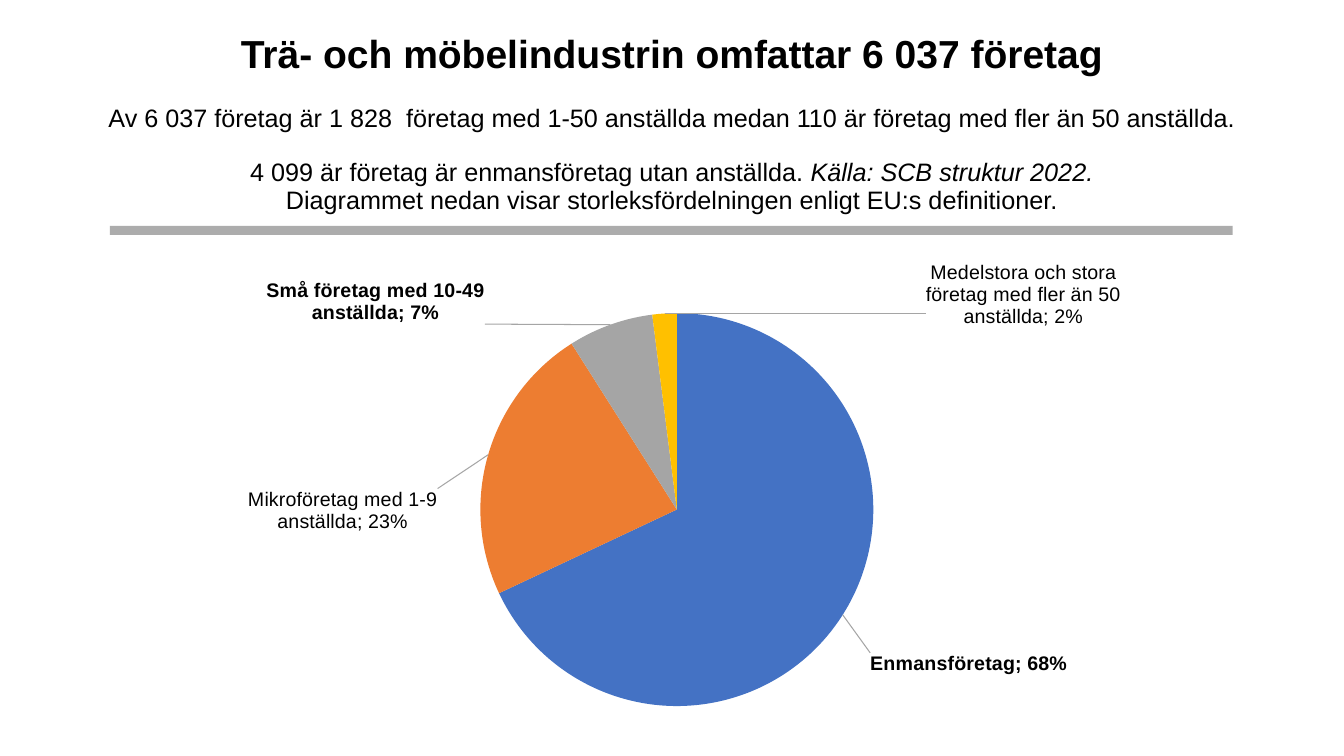
from lxml.etree import SubElement
from pptx import Presentation
from pptx.chart.data import CategoryChartData
from pptx.dml.color import RGBColor
from pptx.enum.chart import XL_CHART_TYPE as ChartType, XL_LABEL_POSITION as LabelPosition
from pptx.enum.shapes import MSO_SHAPE as Preset
from pptx.enum.text import MSO_ANCHOR as Anchor, PP_ALIGN as Align
from pptx.oxml import parse_xml
from pptx.oxml.ns import nsdecls, qn
from pptx.util import Pt

BLACK = RGBColor(0x00, 0x00, 0x00)
GREY = RGBColor(0x80, 0x80, 0x80)
BLUE = RGBColor(0x44, 0x72, 0xC4)
ORANGE = RGBColor(0xED, 0x7D, 0x31)
SILVER = RGBColor(0xA5, 0xA5, 0xA5)
GOLD = RGBColor(0xFF, 0xC0, 0x00)

HEADING = [
    (32, 0, [("Trä- och möbelindustrin omfattar 6 037 företag", dict(size=Pt(27.9), bold=True))]),
    (20, 20, [("Av 6 037 företag är 1 828  företag med 1-50 anställda medan 110 är "
               "företag med fler än 50 anställda.", {})]),
    (20, 18.6, [("4 099 är företag är enmansföretag utan anställda. ", {}),
                ("Källa: SCB struktur 2022.", dict(italic=True))]),
    (20, 0, [("Diagrammet nedan visar storleksfördelningen enligt EU:s definitioner.", {})]),
]
COMPANY_SIZES = [
    ("Enmansföretag", 0.68, BLUE, True, (0.02, 0.07)),
    ("Mikroföretag med 1-9 anställda", 0.23, ORANGE, False, (-0.04, 0.16)),
    ("Små företag med 10-49 anställda", 0.07, SILVER, True, (-0.11, 0.01)),
    ("Medelstora och stora företag med fler än 50 anställda", 0.02, GOLD, False, (0.32, 0.04)),
]
PIE_AREA = dict(x=0.33, y=0.17, w=0.35, h=0.8)


def manual_layout(edges=(), **values):
    layout = parse_xml(f"<c:layout {nsdecls('c')}><c:manualLayout/></c:layout>")
    for tag, value in [*edges, *values.items()]:
        SubElement(layout[0], qn(f"c:{tag}")).set("val", str(value))
    return layout


class SlideBuilder:
    def __init__(self, slide, font_name="Arial", text_size=18, label_size=14):
        self.slide = slide
        self.text = dict(name=font_name, size=Pt(text_size))
        self.label = dict(name=font_name, size=Pt(label_size))

    def format_font(self, font, **values):
        for name, value in values.items():
            setattr(font, name, value)
        font.color.rgb = BLACK

    def heading(self, lines, *box):
        frame = self.slide.shapes.add_textbox(*map(Pt, box)).text_frame
        settings = dict(word_wrap=True, vertical_anchor=Anchor.TOP, margin_left=0,
                        margin_right=0, margin_top=0, margin_bottom=0)
        for name, value in settings.items():
            setattr(frame, name, value)
        for index, (height, gap, parts) in enumerate(lines):
            line = frame.add_paragraph() if index else frame.paragraphs[0]
            line.alignment = Align.CENTER
            line.line_spacing = Pt(height)
            line.space_before = Pt(gap)
            for words, values in parts:
                run = line.add_run()
                run.text = words
                self.format_font(run.font, **{**self.text, **values})

    def divider(self, color, opacity, *box):
        bar = self.slide.shapes.add_shape(Preset.RECTANGLE, *map(Pt, box))
        bar.shadow.inherit = False
        bar.line.fill.background()
        bar.fill.solid()
        bar.fill.fore_color.rgb = color
        tint = bar.fill._xPr.find(".//" + qn("a:srgbClr"))
        SubElement(tint, qn("a:alpha")).set("val", str(opacity * 1000))

    def pie(self, groups, *box):
        data = CategoryChartData(number_format="0%")
        data.categories = [group[0] for group in groups]
        data.add_series("Series 1", [group[1] for group in groups])
        chart = self.slide.shapes.add_chart(ChartType.PIE, *map(Pt, box), data).chart
        chart.has_legend = False
        chart.has_title = False
        self.format_font(chart.font, **self.text)
        plot = chart.plots[0]
        plot.vary_by_categories = True
        pie_series = plot.series[0]

        labels = pie_series.data_labels
        settings = dict(show_value=True, show_category_name=True, number_format="0%",
                        number_format_is_linked=False, position=LabelPosition.OUTSIDE_END)
        for name, value in settings.items():
            setattr(labels, name, value)
        self.format_font(labels.font, **self.label, bold=True)

        for index, (_, _, color, bold, _) in enumerate(groups):
            point = pie_series.points[index]
            point.format.fill.solid()
            point.format.fill.fore_color.rgb = color
            point.format.line.fill.background()
            self.format_font(point.data_label.font, **self.label, bold=bold)
            point.data_label.position = LabelPosition.OUTSIDE_END

        space = chart._chartSpace
        for label, group in zip(space.xpath(".//c:dLbl"), groups):
            x, y = group[4]
            label.insert(1, manual_layout(x=x, y=y))
            label.insert(2, parse_xml(
                f'<c:numFmt {nsdecls("c")} formatCode="0%" sourceLinked="0"/>'))
            label.find(qn("c:showCatName")).set("val", "1")
            SubElement(label, qn("c:separator")).text = "; "

        label_list = space.xpath(".//c:ser/c:dLbls")[0]
        for old in label_list.findall(qn("c:showLeaderLines")):
            label_list.remove(old)
        SubElement(label_list, qn("c:separator")).text = "; "
        SubElement(label_list, qn("c:showLeaderLines")).set("val", "1")
        label_list.append(parse_xml(
            f'<c:leaderLines {nsdecls("c", "a")}><c:spPr><a:ln w="9525"><a:solidFill>'
            f'<a:srgbClr val="{SILVER}"/></a:solidFill></a:ln></c:spPr></c:leaderLines>'))

        plot_area = space.xpath(".//c:plotArea")[0]
        for old in plot_area.findall(qn("c:layout")):
            plot_area.remove(old)
        edges = [("layoutTarget", "inner"), ("xMode", "edge"), ("yMode", "edge")]
        plot_area.insert(0, manual_layout(edges, **PIE_AREA))
        space.find(qn("c:chart")).addnext(parse_xml(
            f'<c:spPr {nsdecls("c", "a")}><a:noFill/><a:ln><a:noFill/></a:ln></c:spPr>'))


def main():
    deck = Presentation()
    deck.slide_width, deck.slide_height = Pt(960), Pt(540)
    builder = SlideBuilder(deck.slides.add_slide(deck.slide_layouts[6]))
    builder.heading(HEADING, 68.4, 22.5, 823, 130.6)
    builder.divider(GREY, 65, 78.5, 161.3, 802, 6.5)
    builder.pie(COMPANY_SIZES, 78.5, 161.3, 802, 355.7)
    deck.save("out.pptx")


if __name__ == "__main__":
    main()
